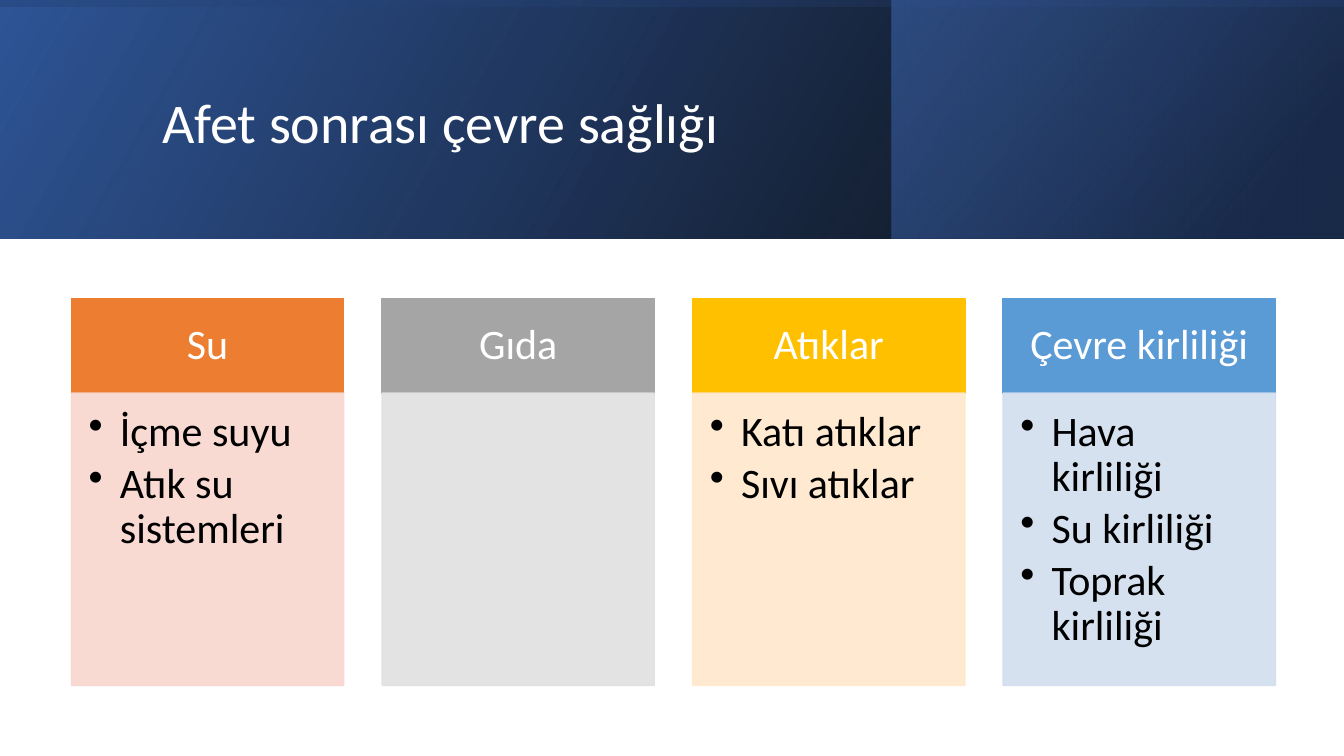
from pptx import Presentation
from pptx import util as u
from pptx.dml.color import RGBColor
from pptx.enum import shapes, text
from pptx.oxml.ns import qn
from lxml import etree

COLORS = {
    "white": "FFFFFF", "black": "000000", "navy": "2F5597",
    "deep": "203864", "blue": "4472C4",
}
COLUMNS = [
    ("Su", "ED7D31", "F8D7CE", ["İçme suyu", "Atık su sistemleri"]),
    ("Gıda", "A5A5A5", "E1E1E1", []),
    ("Atıklar", "FFC000", "FFE8CC", ["Katı atıklar", "Sıvı atıklar"]),
    ("Çevre kirliliği", "5B9BD5", "D2DEEF",
     ["Hava kirliliği", "Su kirliliği", "Toprak kirliliği"]),
]
LEFT, PITCH, COL_W = 0.71, 3.08, 2.7
HEAD_Y, HEAD_H, BODY_H = 2.96, 0.94, 2.9
BAND_W, BAND_H, PANEL_X = 13.33, 2.37, 8.84


class Deck:
    """Holds the style and current slide, and draws each kind of element."""

    font = "Calibri"

    def __init__(self, width, height):
        self.prs = Presentation()
        self.prs.slide_width, self.prs.slide_height = u.Inches(width), u.Inches(height)
        self.slide = self.prs.slides.add_slide(self.prs.slide_layouts[6])

    def rect(self, *box):
        sp = self.slide.shapes.add_shape(shapes.MSO_SHAPE.RECTANGLE, *map(u.Inches, box))
        sp.shadow.inherit = False
        return sp

    def alpha(self, sp, shares):
        for clr, share in zip(sp._element.spPr.iter(qn("a:srgbClr")), shares):
            etree.SubElement(clr, qn("a:alpha"), val=str(share * 1000))

    def gradient(self, box, angle, stops, rotation=0):
        sp = self.rect(*box)
        sp.rotation = rotation
        sp._element.spPr.xfrm.set("flipH", "1")
        sp.line.fill.background()
        sp.fill.gradient()
        sp.fill.gradient_angle = 360 - angle
        for stop, (position, color, _) in zip(sp.fill.gradient_stops, stops):
            stop.position = position
            stop.color.rgb = RGBColor.from_string(COLORS[color])
        self.alpha(sp, [opacity for _, _, opacity in stops])

    def block(self, box, color, opacity=100):
        sp = self.rect(*box)
        sp.fill.solid()
        for fmt in (sp.fill.fore_color, sp.line.color):
            fmt.rgb = RGBColor.from_string(color)
        sp.line.width = u.Pt(1)
        if opacity < 100:
            self.alpha(sp, [opacity, opacity])
        return sp

    def fill_text(self, sp, lines, size, color, anchor, align, insets, after=0, bullet=False):
        tf = sp.text_frame
        frame = dict(zip(("margin_left", "margin_top", "margin_right", "margin_bottom"),
                         map(u.Inches, insets)))
        for name, value in {**frame, "word_wrap": True, "vertical_anchor": anchor}.items():
            setattr(tf, name, value)
        for i, line in enumerate(lines):
            p = tf.paragraphs[0] if i == 0 else tf.add_paragraph()
            style = {"alignment": align, "line_spacing": 0.9, "space_after": u.Pt(after)}
            for name, value in style.items():
                setattr(p, name, value)
            if bullet:
                pPr = p._p.get_or_add_pPr()
                pPr.set("marL", str(u.Inches(0.31)))
                pPr.set("indent", str(u.Inches(-0.31)))
                etree.SubElement(pPr, qn("a:buChar"), char="•")
            r = p.add_run()
            r.text = line
            for name, value in {"name": self.font, "size": u.Pt(size)}.items():
                setattr(r.font, name, value)
            r.font.color.rgb = RGBColor.from_string(COLORS[color])

    def title(self, box, line):
        sp = self.slide.shapes.add_textbox(*map(u.Inches, box))
        self.fill_text(sp, [line], 40, "white", text.MSO_ANCHOR.MIDDLE,
                       text.PP_ALIGN.LEFT, (0.1, 0.05, 0.1, 0.05))

    def column(self, index, head, dark, light, items):
        x = LEFT + index * PITCH
        sp = self.block((x, HEAD_Y, COL_W, HEAD_H), dark)
        self.fill_text(sp, [head], 30, "white", text.MSO_ANCHOR.MIDDLE,
                       text.PP_ALIGN.CENTER, (0.23, 0.13, 0.23, 0.13), after=10.5)
        sp = self.block((x, HEAD_Y + HEAD_H, COL_W, BODY_H), light, 90)
        self.fill_text(sp, items, 30, "black", text.MSO_ANCHOR.TOP, text.PP_ALIGN.LEFT,
                       (0.17, 0.17, 0.23, 0.26), after=4.5, bullet=True)


def main():
    deck = Deck(13.33, 7.5)
    deck.gradient((0, 0, BAND_W, BAND_H), 330, [(0, "black", 96), (1, "navy", 100)])
    deck.gradient((PANEL_X, 0, BAND_W - PANEL_X, BAND_H), 320,
                  [(0.19, "deep", 68), (1, "blue", 48)])
    offset = (BAND_W - BAND_H) / 2
    deck.gradient((offset, -offset, BAND_H, BAND_W), 350,
                  [(0.23, "navy", 16), (0.99, "black", 45)], rotation=270)
    deck.title((1.51, 0.38, 10.63, 1.72), "Afet sonrası çevre sağlığı")
    for i, column in enumerate(COLUMNS):
        deck.column(i, *column)
    deck.prs.save("out.pptx")


if __name__ == "__main__":
    main()
